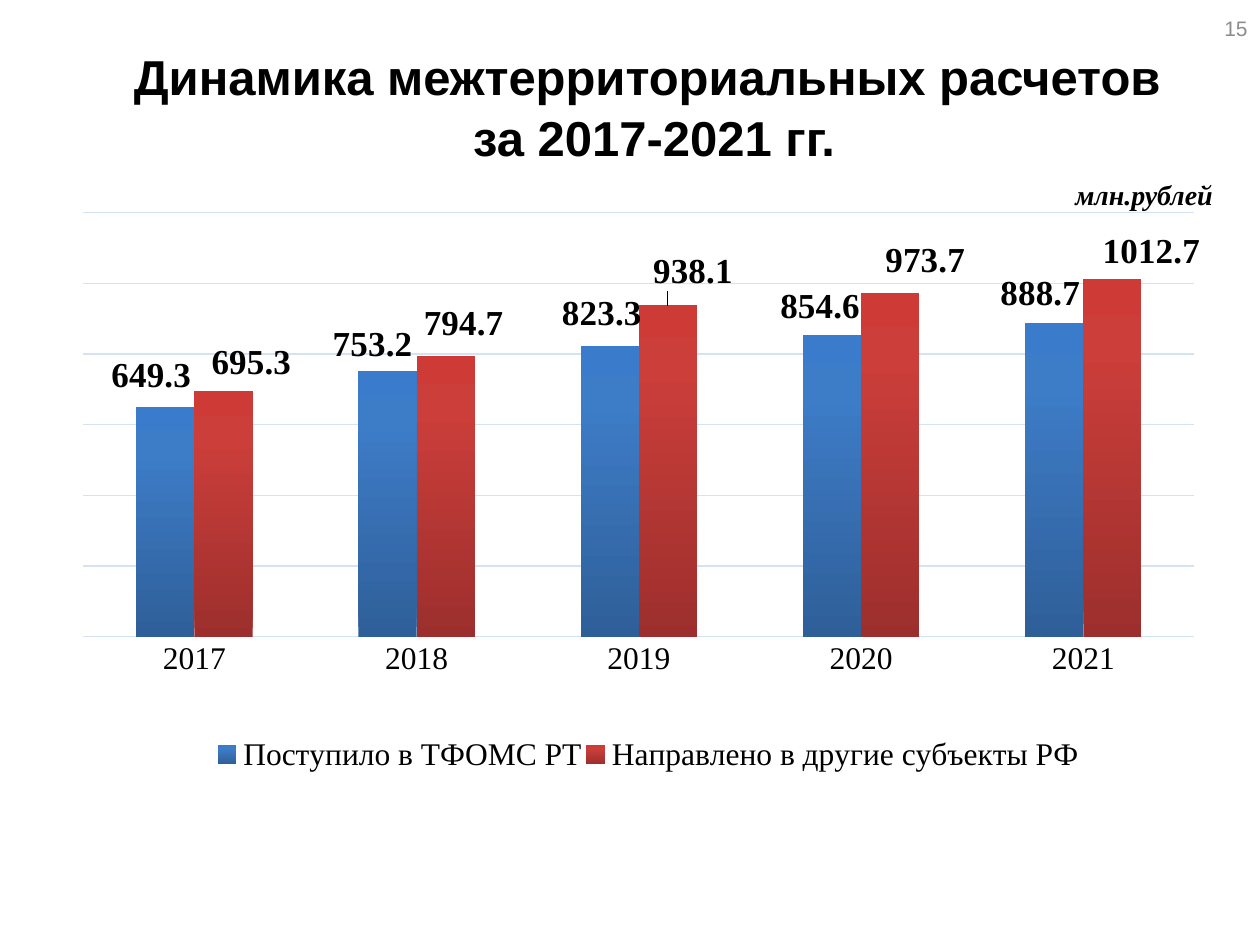
from lxml.etree import SubElement
from pptx import Presentation
from pptx.chart.data import CategoryChartData
from pptx.dml.color import RGBColor
from pptx.enum.chart import XL_CHART_TYPE, XL_LABEL_POSITION, XL_LEGEND_POSITION, XL_TICK_LABEL_POSITION, XL_TICK_MARK
from pptx.enum.text import MSO_ANCHOR, PP_ALIGN
from pptx.oxml import parse_xml
from pptx.oxml.ns import nsdecls, qn
from pptx.util import Pt

SCALE = 914400 / 126
SANS = "Arial"
SERIF = "Times New Roman"
COLORS = {"text": "000000", "number": "8C8C8C", "grid": "D4E3F4"}
YEARS = ["2017", "2018", "2019", "2020", "2021"]
CHART_SIZE = (1160, 674)
SERIES = [
    {
        "name": "Поступило в ТФОМС РТ",
        "values": [649.3, 753.2, 823.3, 854.6, 888.7],
        "stops": [(0, "2F5F99"), (80, "3D7CC7"), (100, "3A7CCB")],
        "shifts": [(-14, -7), (-15, -1), (-8, -8), (-12, -4), (-14, -4)],
    },
    {
        "name": "Направлено в другие субъекты РФ",
        "values": [695.3, 794.7, 938.1, 973.7, 1012.7],
        "stops": [(0, "9C2F2D"), (80, "CB3E3A"), (100, "CE3B37")],
        "shifts": [(28, -4), (18, -8), (25, -9), (35, -7), (39, -3)],
    },
]


def px(length):
    return round(length * SCALE)


class SlideBuilder:
    def __init__(self, deck):
        self.slide = deck.slides.add_slide(deck.slide_layouts[5])

    def set_font(self, font, size, name=SANS, color="text", bold=False, italic=False):
        font.size = Pt(size)
        font.name = name
        font.bold = bold
        font.italic = italic
        font.color.rgb = RGBColor.from_string(COLORS[color])

    def place(self, box, area):
        box.left, box.top, box.width, box.height = map(px, area)

    def title(self, text, area):
        box = self.slide.shapes.title
        self.place(box, area)
        box.text_frame.text = text
        box.text_frame.vertical_anchor = MSO_ANCHOR.MIDDLE
        para = box.text_frame.paragraphs[0]
        para.alignment = PP_ALIGN.CENTER
        para.line_spacing = 1.05
        self.set_font(para.font, 28, bold=True)

    def text(self, text, area, align=PP_ALIGN.LEFT, anchor=MSO_ANCHOR.TOP, **style):
        box = self.slide.shapes.add_textbox(*map(px, area))
        frame = box.text_frame
        frame.word_wrap = True
        frame.vertical_anchor = anchor
        para = frame.paragraphs[0]
        para.text = text
        para.alignment = align
        self.set_font(para.font, **style)

    def layout(self, parent, index, **settings):
        layout = parent.find(qn("c:layout"))
        if layout is not None:
            parent.remove(layout)
        layout = parse_xml(f"<c:layout {nsdecls('c')}><c:manualLayout/></c:layout>")
        for name, value in settings.items():
            SubElement(layout[0], qn(f"c:{name}")).set("val", str(value))
        parent.insert(index, layout)

    def line(self, line):
        line.color.rgb = RGBColor.from_string(COLORS["grid"])
        line.width = Pt(0.75)

    def gradient(self, series, stops):
        series.format.fill.solid()
        old = series.format.fill._xPr.find(qn("a:solidFill"))
        marks = "".join(
            f'<a:gs pos="{position * 1000}"><a:srgbClr val="{color}"/></a:gs>'
            for position, color in stops
        )
        old.getparent().replace(old, parse_xml(
            f'<a:gradFill {nsdecls("a")} rotWithShape="1"><a:gsLst>{marks}</a:gsLst>'
            '<a:lin ang="16200000" scaled="0"/></a:gradFill>'
        ))

    def labels(self, series, shifts):
        labels = series.data_labels
        labels.show_value = True
        labels.position = XL_LABEL_POSITION.OUTSIDE_END
        self.set_font(labels.font, 20, SERIF, bold=True)
        for index, (across, down) in enumerate(shifts):
            label = series.points[index].data_label
            self.set_font(label.font, 20, SERIF, bold=True)
            label.position = XL_LABEL_POSITION.OUTSIDE_END
        width, height = CHART_SIZE
        for element, (across, down) in zip(series._element.xpath(".//c:dLbl"), shifts):
            self.layout(element, 1, x=round(across / width, 4), y=round(down / height, 4))

    def axes(self, chart):
        categories = chart.category_axis
        categories.major_tick_mark = XL_TICK_MARK.NONE
        self.line(categories.format.line)
        self.set_font(categories.tick_labels.font, 18, SERIF)
        values = chart.value_axis
        values.minimum_scale = 0
        values.maximum_scale = 1200
        values.major_unit = 200
        values.major_tick_mark = XL_TICK_MARK.NONE
        values.tick_label_position = XL_TICK_LABEL_POSITION.NONE
        values.format.line.fill.background()
        self.line(values.major_gridlines.format.line)

    def legend(self, chart):
        chart.has_legend = True
        legend = chart.legend
        legend.position = XL_LEGEND_POSITION.BOTTOM
        legend.include_in_layout = False
        self.set_font(legend.font, 18, SERIF)
        self.layout(legend._element, 1, xMode="edge", yMode="edge", x=0.12, y=0.8, w=0.75, h=0.07)

    def column_chart(self, area):
        data = CategoryChartData()
        data.categories = YEARS
        for entry in SERIES:
            data.add_series(entry["name"], entry["values"])
        frame = self.slide.shapes.add_chart(XL_CHART_TYPE.COLUMN_CLUSTERED, *map(px, area), data)
        chart = frame.chart
        chart.has_title = False
        self.set_font(chart.font, 10)
        self.axes(chart)
        self.legend(chart)
        plot = chart.plots[0]
        plot.gap_width = 182
        plot.overlap = 0
        plot.vary_by_categories = False
        for series, entry in zip(plot.series, SERIES):
            self.gradient(series, entry["stops"])
            self.labels(series, entry["shifts"])
        self.layout(
            plot._element.getparent(), 0, layoutTarget="inner", xMode="edge", yMode="edge",
            x=0.008, y=0.031, w=0.958, h=0.629,
        )


def main():
    deck = Presentation()
    deck.slide_width = px(1260)
    deck.slide_height = px(945)
    page = SlideBuilder(deck)
    page.column_chart((74, 192, *CHART_SIZE))
    page.text("млн.рублей", (1063, 171, 198, 39), size=16, name=SERIF, bold=True, italic=True)
    page.title("Динамика межтерриториальных расчетов \vза 2017-2021 гг.", (74, 26, 1160, 158))
    page.text("15", (966, 3, 294, 50), PP_ALIGN.RIGHT, MSO_ANCHOR.MIDDLE, size=12, color="number")
    deck.save("out.pptx")


if __name__ == "__main__":
    main()
